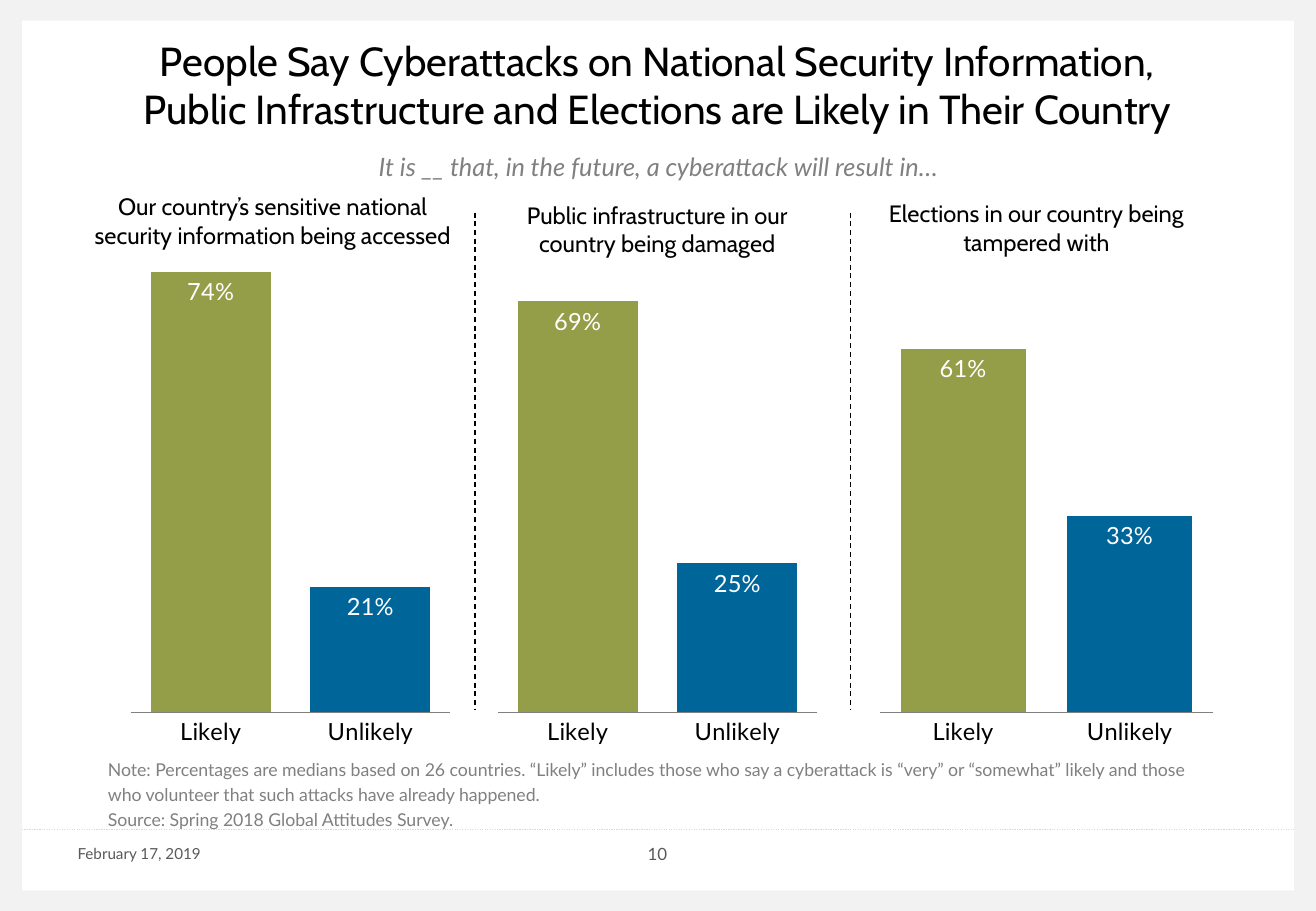
from dataclasses import dataclass

from lxml import etree
from pptx import Presentation
from pptx import util as u
from pptx.chart.data import CategoryChartData
from pptx.dml.color import RGBColor
from pptx.enum import chart as ch, dml, shapes, text
from pptx.oxml import parse_xml
from pptx.oxml.ns import nsdecls, qn


@dataclass(frozen=True)
class Theme:
    heading: str = "Cabin"
    body: str = "Lato"
    black: str = "000000"
    white: str = "FFFFFF"
    grey: str = "808080"
    footer: str = "595959"
    rule: str = "D9D9D9"
    frame: str = "F2F2F2"
    likely: str = "949D48"
    unlikely: str = "006699"
    title_size: float = 24
    subtitle_size: float = 15
    label_size: float = 14
    note_size: float = 10.5
    number_size: float = 10
    date_size: float = 9


def rgb(value):
    return RGBColor.from_string(value)


def inches(*values):
    return [u.Inches(v) for v in values]


def style_font(font, name, size, color, italic=False):
    font.name, font.size, font.italic = name, u.Pt(size), italic
    font.color.rgb = rgb(color)


def write(frame, content, font, size, color, align=text.PP_ALIGN.LEFT,
          anchor=text.MSO_ANCHOR.MIDDLE, italic=False):
    """Fill a text frame, one paragraph per line, spaced by 20% of the size."""
    frame.word_wrap = True
    frame.auto_size = text.MSO_AUTO_SIZE.NONE
    frame.vertical_anchor = anchor
    for i, line in enumerate(content.split("\n")):
        paragraph = frame.add_paragraph() if i else frame.paragraphs[0]
        paragraph.alignment = align
        paragraph.space_before = u.Pt(size * 0.2 if i else 0)
        run = paragraph.add_run()
        run.text = line
        style_font(run.font, font, size, color, italic)


class SlideBuilder:
    def __init__(self, prs, theme):
        self.theme = theme
        self.slide = prs.slides.add_slide(prs.slide_layouts[5])

    def title(self, content, box):
        title = self.slide.shapes.title
        title.left, title.top, title.width, title.height = inches(*box)
        write(title.text_frame, content, self.theme.heading,
              self.theme.title_size, self.theme.black, text.PP_ALIGN.CENTER)

    def text(self, content, box, font, size, color, **layout):
        textbox = self.slide.shapes.add_textbox(*inches(*box))
        write(textbox.text_frame, content, font, size, color, **layout)

    def band(self, box):
        band = self.slide.shapes.add_shape(shapes.MSO_SHAPE.RECTANGLE, *inches(*box))
        band.shadow.inherit = False
        band.fill.solid()
        band.fill.fore_color.rgb = rgb(self.theme.frame)
        band.line.fill.background()

    def line(self, ends, color, dash):
        line = self.slide.shapes.add_connector(
            shapes.MSO_CONNECTOR.STRAIGHT, *inches(*ends))
        line.line.color.rgb = rgb(color)
        line.line.width = u.Pt(0.75)
        line.line.dash_style = dash
        etree.SubElement(line._element.spPr, qn("a:effectLst"))

    def columns(self, values, box):
        theme = self.theme
        data = CategoryChartData()
        data.categories = ["Likely", "Unlikely"]
        data.add_series("Share", values)
        chart = self.slide.shapes.add_chart(
            ch.XL_CHART_TYPE.COLUMN_CLUSTERED, *inches(*box), data).chart
        chart.has_legend = chart.has_title = False
        style_font(chart.font, theme.body, theme.label_size, theme.black)

        # Axes
        value_axis, category_axis = chart.value_axis, chart.category_axis
        value_axis.minimum_scale, value_axis.maximum_scale = 0, 77
        value_axis.has_major_gridlines = value_axis.visible = False
        category_axis.major_tick_mark = ch.XL_TICK_MARK.NONE
        category_axis.format.line.color.rgb = rgb(theme.grey)
        category_axis.format.line.width = u.Pt(0.75)

        # Columns and their labels
        plot = chart.plots[0]
        plot.gap_width = 33
        plot.vary_by_categories = False
        series = plot.series[0]
        series.invert_if_negative = False
        for i, color in enumerate((theme.likely, theme.unlikely)):
            fill = series.points[i].format.fill
            fill.solid()
            fill.fore_color.rgb = rgb(color)
        plot.has_data_labels = True
        labels = plot.data_labels
        labels.show_value = True
        labels.number_format, labels.number_format_is_linked = '0"%"', False
        labels.position = ch.XL_LABEL_POSITION.INSIDE_END
        style_font(labels.font, theme.body, theme.label_size, theme.white)

        # Fixed plot area
        area = chart._chartSpace.chart.plotArea
        for layout in area.findall(qn("c:layout")):
            area.remove(layout)
        modes = '<c:layoutTarget val="inner"/><c:xMode val="edge"/><c:yMode val="edge"/>'
        sizes = "".join(f'<c:{key} val="{val}"/>' for key, val in
                        zip("xywh", (0.038, 0, 0.929, 0.888)))
        area.insert(0, parse_xml(
            f'<c:layout {nsdecls("c")}><c:manualLayout>{modes}{sizes}'
            '</c:manualLayout></c:layout>'))


def main():
    theme = Theme()
    center = text.PP_ALIGN.CENTER
    top, bottom = text.MSO_ANCHOR.TOP, text.MSO_ANCHOR.BOTTOM
    prs = Presentation()
    prs.slide_width, prs.slide_height = inches(10.83, 7.5)
    page = SlideBuilder(prs, theme)

    # Frame and footer
    for band in ((0, 0, 0.18, 7.5), (10.65, 0, 0.18, 7.5),
                 (0.18, 0, 10.47, 0.17), (0.18, 7.33, 10.47, 0.17)):
        page.band(band)
    page.line((0.18, 6.83, 10.65, 6.83), theme.rule, dml.MSO_LINE.ROUND_DOT)
    page.text("February 17, 2019", (0.54, 6.83, 1.44, 0.4),
              theme.body, theme.date_size, theme.footer)
    page.text("10", (4.78, 6.83, 1.26, 0.4),
              theme.body, theme.number_size, theme.footer, align=center)

    # Title and question
    page.title("People Say Cyberattacks on National Security Information, "
               "Public Infrastructure and Elections are Likely in Their Country",
               (0.79, 0.18, 9.24, 1.03))
    page.text("It is __ that, in the future, a cyberattack will result in…",
              (0.92, 1.19, 9, 0.35), theme.body, theme.subtitle_size, theme.grey,
              align=center, anchor=bottom, italic=True)

    # Three panels: heading and chart
    panels = (
        ("Our country’s sensitive national security information being accessed",
         (0.58, 1.54, 3.33, 0.56), bottom, (74, 21), 0.97, 2.83),
        ("Public infrastructure in our country being damaged",
         (3.99, 1.47, 2.84, 0.7), bottom, (69, 25), 3.99, 2.83),
        ("Elections in our country being tampered with",
         (7.11, 1.59, 2.84, 0.57), top, (61, 33), 7.13, 2.95),
    )
    for heading, box, anchor, values, left, width in panels:
        page.text(heading, box, theme.heading, theme.label_size, theme.black,
                  align=center, anchor=anchor)
        page.columns(values, (left, 2.09, width, 4.25))
    for x in (3.91, 7):
        page.line((x, 1.75, x, 5.84), theme.black, dml.MSO_LINE.DASH)

    # Note and source
    page.text("Note: Percentages are medians based on 26 countries. “Likely” includes "
              "those who say a cyberattack is “very” or “somewhat” likely and those\n"
              "who volunteer that such attacks have already happened.\n"
              "Source: Spring 2018 Global Attitudes Survey.",
              (0.79, 6.2, 9.11, 0.7), theme.body, theme.note_size, theme.grey,
              anchor=top)

    prs.save("out.pptx")


if __name__ == "__main__":
    main()
